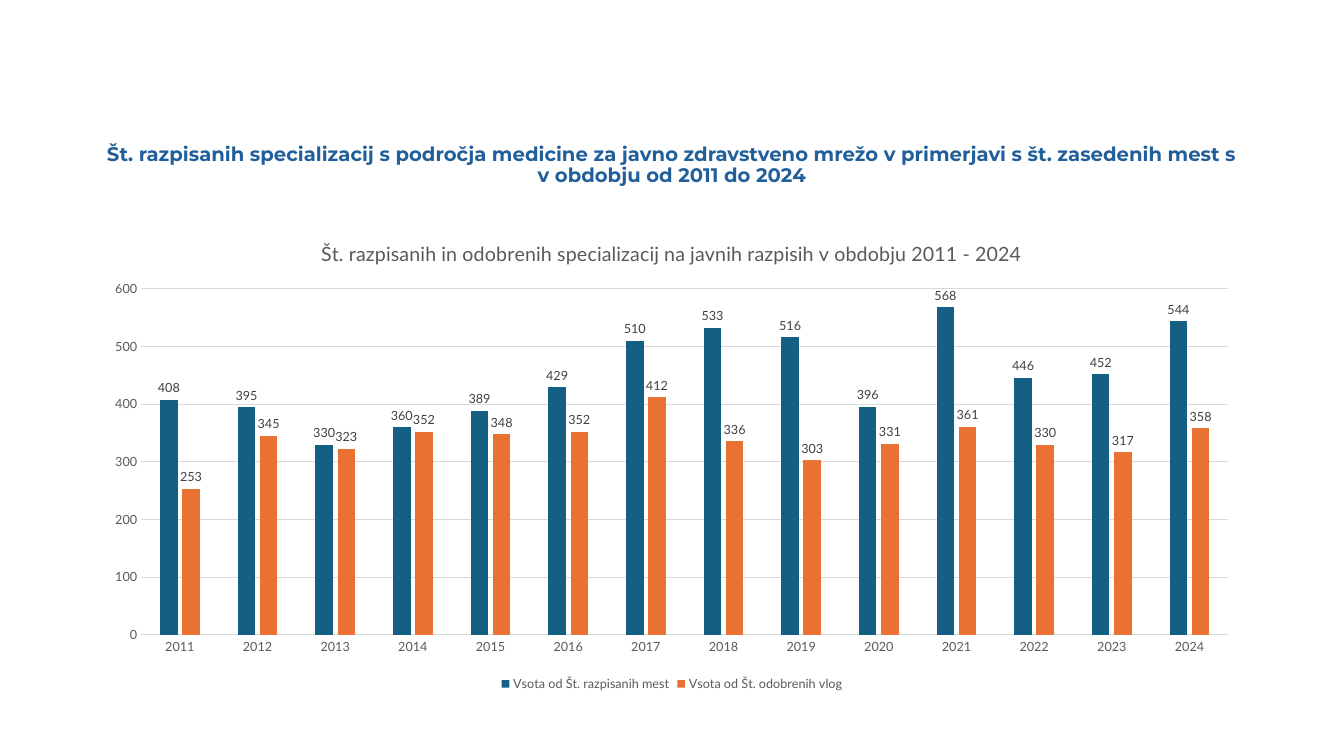
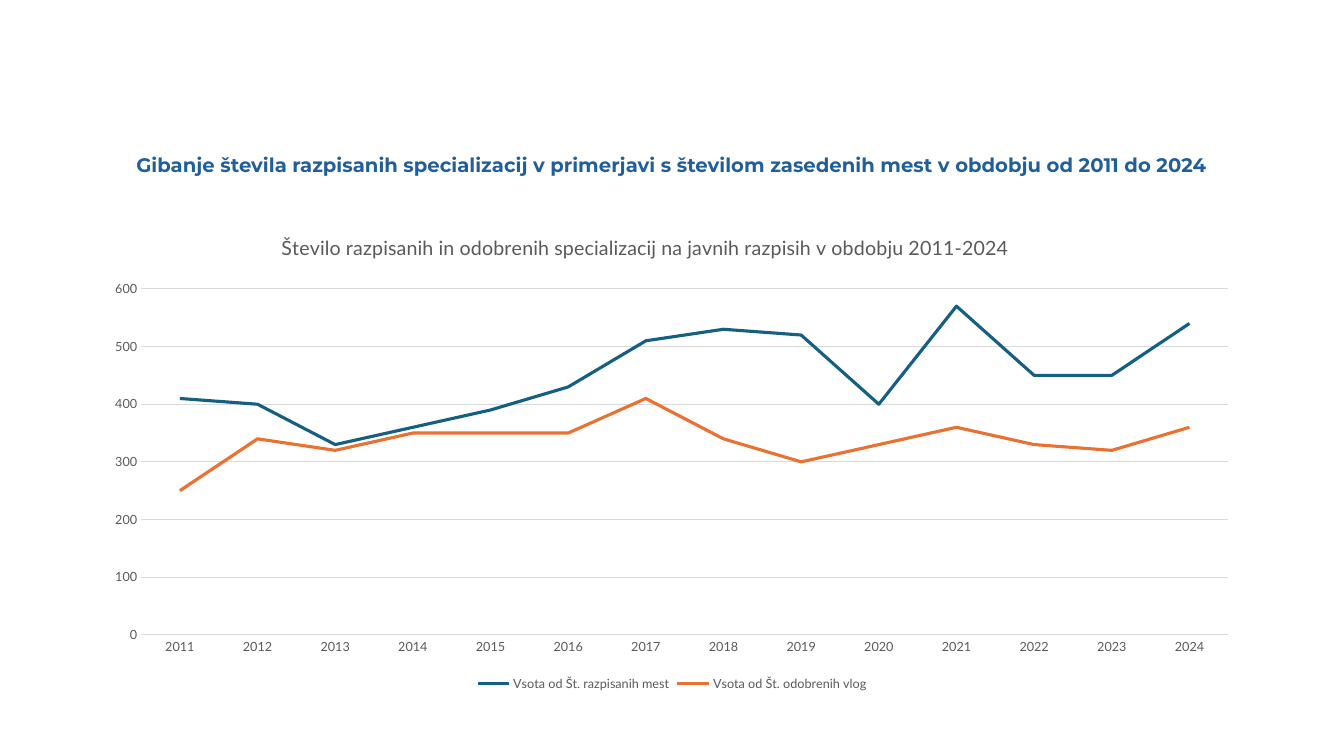
import dataclasses

import pptx
import pptx.chart.data
import pptx.dml.color
import pptx.enum.chart
import pptx.enum.text
import pptx.oxml
import pptx.oxml.ns
import pptx.util

Pt = pptx.util.Pt
RGB = pptx.dml.color.RGBColor.from_string
XL = pptx.enum.chart


@dataclasses.dataclass(frozen=True)
class Theme:
    heading: str = "215F9A"
    muted: str = "595959"
    label: str = "404040"
    grid: str = "D9D9D9"
    series: tuple = ("156082", "E97132")
    heading_font: str = "Montserrat"
    chart_font: str = "Lato"
    title_size: int = 14
    chart_size: int = 9


T = Theme()


def write(tf, text, font=T.chart_font, size=T.title_size, color=T.muted,
          bold=False, spacing=None):
    p = tf.paragraphs[0]
    p.alignment = pptx.enum.text.PP_ALIGN.CENTER
    p.line_spacing = spacing
    r = p.add_run()
    r.text = text
    r.font.name, r.font.size, r.font.bold = font, Pt(size), bold
    r.font.color.rgb = RGB(color)


def place(element, index, **layout):
    """Give a chart part a manual layout, in fractions of the chart."""
    for old in element.findall(pptx.oxml.ns.qn("c:layout")):
        element.remove(old)
    tags = "".join(f'<c:{name} val="{value}"/>' for name, value in layout.items())
    element.insert(index, pptx.oxml.parse_xml(
        f'<c:layout {pptx.oxml.ns.nsdecls("c")}><c:manualLayout>{tags}'
        '</c:manualLayout></c:layout>'))


YEARS = [str(year) for year in range(2011, 2025)]
SERIES = {
    "Vsota od Št. razpisanih mest":
        (408, 395, 330, 360, 389, 429, 510, 533, 516, 396, 568, 446, 452, 544),
    "Vsota od Št. odobrenih vlog":
        (253, 345, 323, 352, 348, 352, 412, 336, 303, 331, 361, 330, 317, 358),
}
# heading, chart title, chart type, chart title position, rounding digits
SLIDES = [
    ("Št. razpisanih specializacij s področja medicine za javno zdravstveno mrežo "
     "v primerjavi s št. zasedenih mest s v obdobju od 2011 do 2024",
     "Št. razpisanih in odobrenih specializacij na javnih razpisih v obdobju 2011 - 2024",
     XL.XL_CHART_TYPE.COLUMN_CLUSTERED, None, 0),
    ("Gibanje števila razpisanih specializacij v primerjavi s številom zasedenih mest "
     "v obdobju od 2011 do 2024",
     "Število razpisanih in odobrenih specializacij na javnih razpisih v obdobju 2011-2024",
     XL.XL_CHART_TYPE.LINE, (0.16, 0.02), -1),
]
LEFT, WIDTH = Pt(66), Pt(828)

prs = pptx.Presentation()
prs.slide_width, prs.slide_height = Pt(960), Pt(540)

for heading, chart_title, chart_type, title_at, digits in SLIDES:
    s = prs.slides.add_slide(prs.slide_layouts[6])
    tf = s.shapes.add_textbox(LEFT, Pt(92), WIDTH, Pt(53)).text_frame
    tf.word_wrap = True
    tf.vertical_anchor = pptx.enum.text.MSO_ANCHOR.MIDDLE
    write(tf, heading, font=T.heading_font, color=T.heading, bold=True, spacing=0.9)

    data = pptx.chart.data.CategoryChartData()
    data.categories = YEARS
    for name, values in SERIES.items():
        data.add_series(name, [round(value, digits) for value in values])

    chart = s.shapes.add_chart(chart_type, LEFT, Pt(157.5), WIDTH, Pt(339.5), data).chart
    chart.font.name, chart.font.size = T.chart_font, Pt(T.chart_size)
    chart.font.color.rgb = RGB(T.muted)
    chart.has_title = True
    write(chart.chart_title.text_frame, chart_title)
    chart.chart_title.include_in_layout = False
    if title_at:
        place(chart.chart_title._element, 1, xMode="edge", yMode="edge",
              x=title_at[0], y=title_at[1])
    chart.has_legend = True
    chart.legend.position = XL.XL_LEGEND_POSITION.BOTTOM
    chart.legend.include_in_layout = False

    for axis in (chart.category_axis, chart.value_axis):
        axis.major_tick_mark = axis.minor_tick_mark = XL.XL_TICK_MARK.NONE
    rows = chart.value_axis
    rows.minimum_scale, rows.maximum_scale, rows.major_unit = 0, 600, 100
    rows.format.line.fill.background()
    rows.has_major_gridlines = True
    for line in (chart.category_axis.format.line, rows.major_gridlines.format.line):
        line.color.rgb = RGB(T.grid)
        line.width = Pt(0.75)

    plot = chart.plots[0]
    plot.vary_by_categories = False
    place(chart._chartSpace.chart.plotArea, 0, layoutTarget="inner",
          xMode="edge", yMode="edge", x=0.042, y=0.144, w=0.938, h=0.728)
    is_column = chart_type == XL.XL_CHART_TYPE.COLUMN_CLUSTERED
    if is_column:
        plot.gap_width, plot.overlap = 219, -27

    for series, color in zip(plot.series, T.series):
        if is_column:
            series.format.fill.solid()
            series.format.fill.fore_color.rgb = RGB(color)
            labels = series.data_labels
            labels.show_value = True
            labels.position = XL.XL_LABEL_POSITION.OUTSIDE_END
            labels.font.name, labels.font.size = T.chart_font, Pt(T.chart_size)
            labels.font.color.rgb = RGB(T.label)
        else:
            series.smooth = False
            series.format.line.color.rgb = RGB(color)
            series.format.line.width = Pt(2.25)

prs.save("out.pptx")
